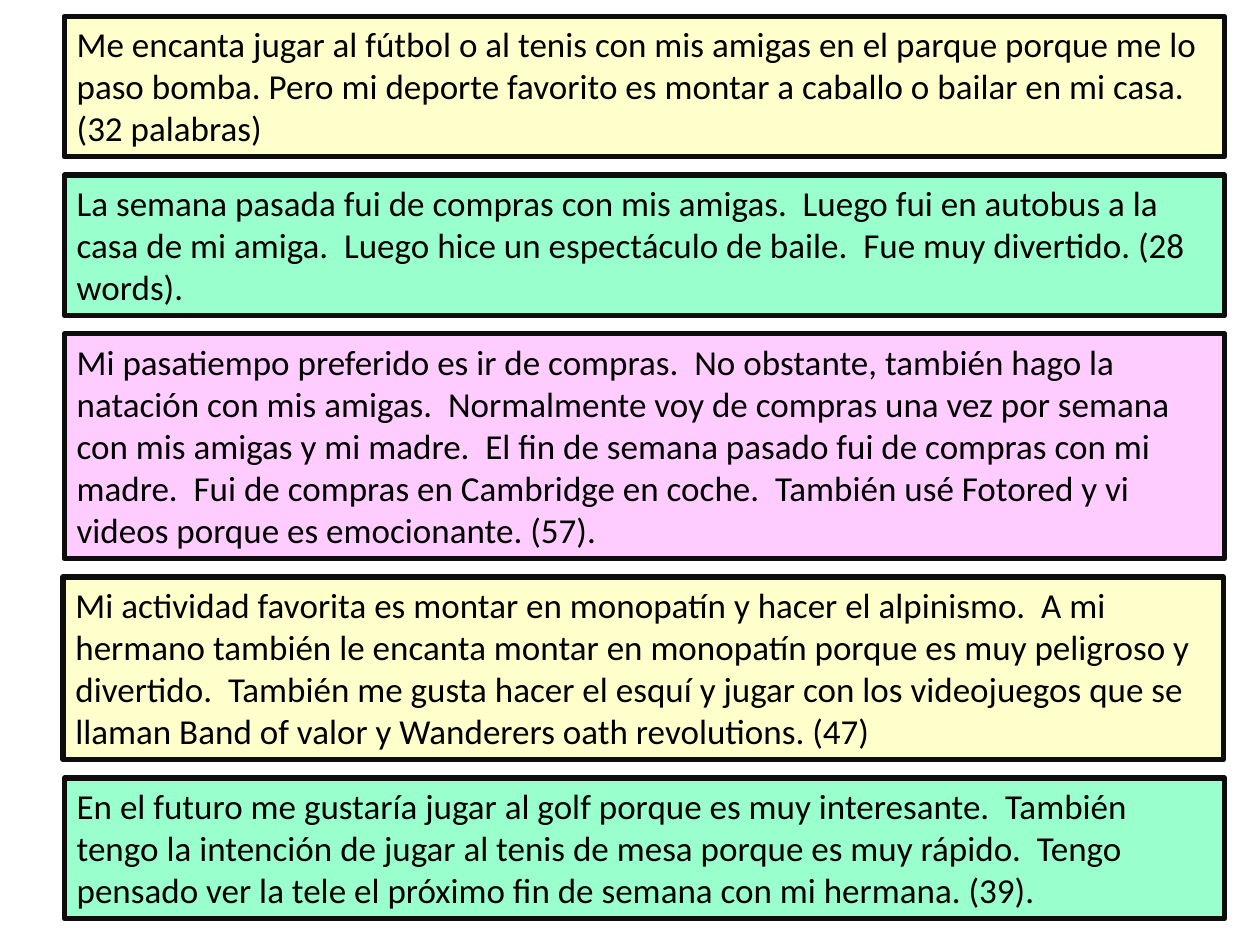
from pptx import Presentation
from pptx.dml.color import RGBColor
from pptx.enum.text import MSO_AUTO_SIZE
from pptx.util import Inches, Pt

COLORS = {
    "cream": "FFFFCC",
    "mint": "99FFCC",
    "pink": "FFCCFF",
    "edge": "0D0D0D",
    "text": "000000",
}
WIDTH = 9.21
TOP = 0.13
GAP = 0.145
PAD = 0.11
LINE = 0.335

CARDS = [
    (0.51, 3, "cream",
     "Me encanta jugar al fútbol o al tenis con mis amigas en el parque "
     "porque me lo paso bomba. Pero mi deporte favorito es montar a caballo "
     "o bailar en mi casa. (32 palabras)"),
    (0.51, 3, "mint",
     "La semana pasada fui de compras con mis amigas.  Luego fui en autobus "
     "a la casa de mi amiga.  Luego hice un espectáculo de baile.  Fue muy "
     "divertido. (28 words)."),
    (0.51, 5, "pink",
     "Mi pasatiempo preferido es ir de compras.  No obstante, también hago "
     "la natación con mis amigas.  Normalmente voy de compras una vez por "
     "semana con mis amigas y mi madre.  El fin de semana pasado fui de "
     "compras con mi madre.  Fui de compras en Cambridge en coche.  También "
     "usé Fotored y vi videos porque es emocionante. (57)."),
    (0.5, 4, "cream",
     "Mi actividad favorita es montar en monopatín y hacer el alpinismo.  A "
     "mi hermano también le encanta montar en monopatín porque es muy "
     "peligroso y divertido.  También me gusta hacer el esquí y jugar con "
     "los videojuegos que se llaman Band of valor y Wanderers oath "
     "revolutions. (47)"),
    (0.51, 3, "mint",
     "En el futuro me gustaría jugar al golf porque es muy interesante.  "
     "También tengo la intención de jugar al tenis de mesa porque es muy "
     "rápido.  Tengo pensado ver la tele el próximo fin de semana con mi "
     "hermana. (39)."),
]


def color(name):
    return RGBColor.from_string(COLORS[name])


def add_card(slide, left, top, width, height, fill, text):
    card = slide.shapes.add_textbox(
        Inches(left), Inches(top), Inches(width), Inches(height))
    card.fill.solid()
    card.fill.fore_color.rgb = color(fill)
    card.line.color.rgb = color("edge")
    card.line.width = Pt(3)
    frame = card.text_frame
    frame.word_wrap = True
    frame.auto_size = MSO_AUTO_SIZE.SHAPE_TO_FIT_TEXT
    frame.text = text
    font = frame.paragraphs[0].font
    font.name = "Calibri"
    font.size = Pt(20)
    font.color.rgb = color("text")


def add_stack(slide, top, width):
    for left, lines, fill, text in CARDS:
        height = PAD + lines * LINE
        add_card(slide, left, top, width, height, fill, text)
        top += height + GAP


def main():
    deck = Presentation()
    deck.slide_width = Inches(10)
    deck.slide_height = Inches(7.5)
    slide = deck.slides.add_slide(deck.slide_layouts[6])
    add_stack(slide, TOP, WIDTH)
    deck.save("out.pptx")


if __name__ == "__main__":
    main()
